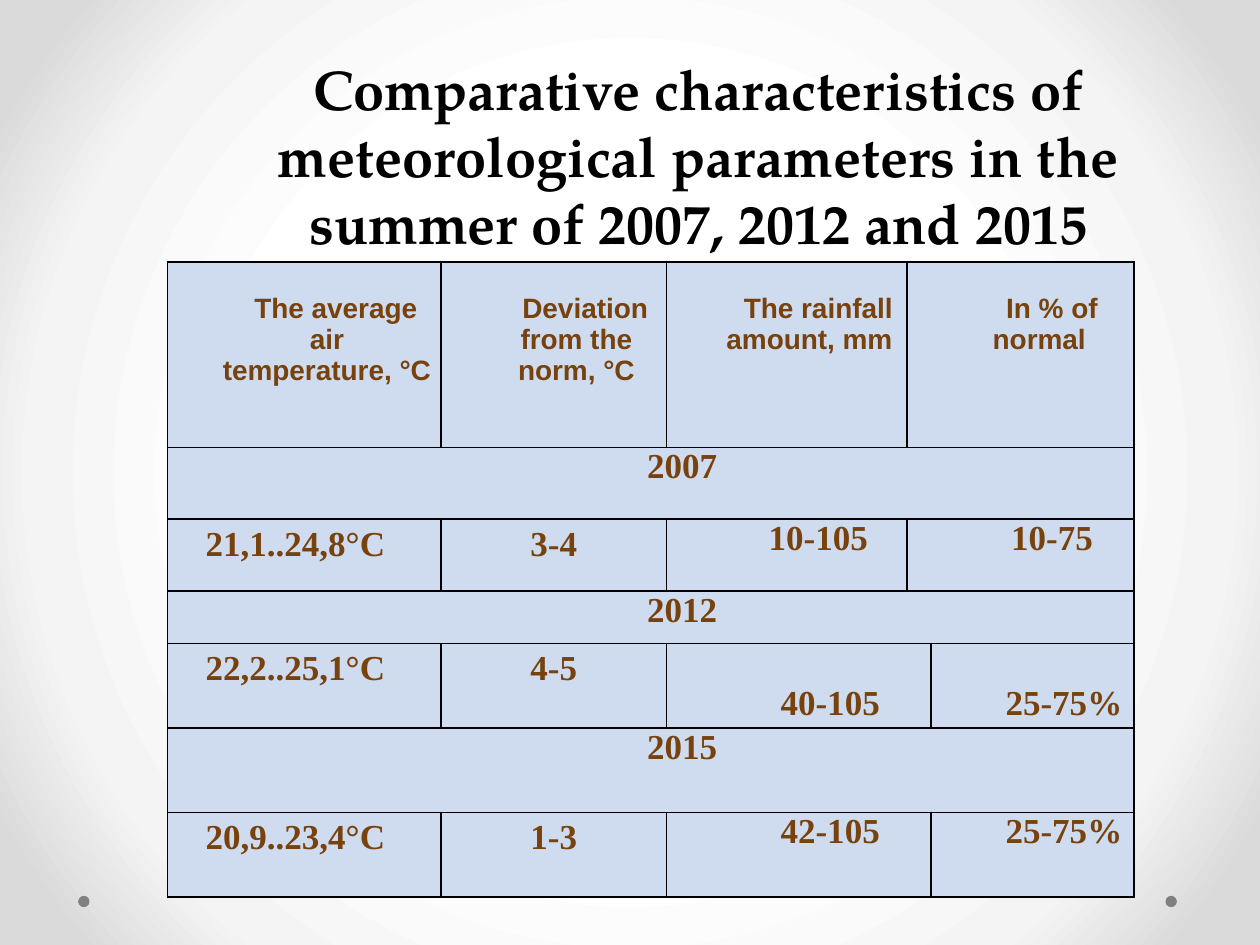
"""Build a slide with a table comparing summer weather in three years."""
from lxml import etree
from pptx import Presentation, util as u
from pptx.dml.color import RGBColor
from pptx.enum import shapes, text
from pptx.oxml import parse_xml
from pptx.oxml.ns import nsdecls, qn

TITLE = "Comparative characteristics of meteorological parameters in the summer of 2007, 2012 and 2015"
HEADERS = ["The average air temperature, °C", "Deviation from the norm, °C",
           "The rainfall amount, mm", "In % of normal "]
YEARS = [
    ("2007", ["21,1..24,8°С", "3-4", "10-105", "10-75"]),
    ("2012", ["22,2..25,1°С", "4-5", "40-105", "25-75%"]),
    ("2015", ["20,9..23,4°С", "1-3", "42-105", "25-75%"]),
]
COLUMN_WIDTHS = [2.17, 1.79, 1.91, 0.19, 1.61]
ROW_HEIGHTS = [1.47, 0.57, 0.57, 0.42, 0.67, 0.67, 0.67]
NARROW_RAINFALL = [(0, 0), (1, 1), (2, 2), (3, 4)]
WIDE_RAINFALL = [(0, 0), (1, 1), (2, 3), (4, 4)]
FULL_WIDTH = [(0, 4)]
COLORS = {"title": "000000", "text": "77420D", "cell": "CFDCF0", "border": "000000", "dot": "808080"}
GRADIENT = [(50, "FFFFFF"), (76, "F4F4F4"), (92, "DADADA")]
TITLE_FONT = {"name": "TeX Gyre Pagella", "size": u.Pt(32), "bold": True}
HEADER_FONT = {"name": "Arial", "size": u.Pt(16), "bold": True}
VALUE_FONT = {"name": "Times New Roman", "size": u.Pt(20), "bold": True}


def apply(target, values):
    for name, value in values.items():
        setattr(target, name, value)


def write(frame, content, font, color):
    paragraph = frame.paragraphs[0]
    paragraph.alignment = text.PP_ALIGN.CENTER
    run = paragraph.add_run()
    run.text = content
    apply(run.font, font)
    run.font.color.rgb = RGBColor.from_string(COLORS[color])
    return paragraph


def set_background(slide):
    stops = "".join(f'<a:gs pos="{position * 1000}"><a:srgbClr val="{color}"/></a:gs>'
                    for position, color in GRADIENT)
    background = parse_xml(
        f'<p:bg {nsdecls("p", "a")}><p:bgPr><a:gradFill rotWithShape="1"><a:gsLst>{stops}</a:gsLst>'
        '<a:path path="circle"><a:fillToRect l="50000" t="50000" r="50000" b="50000"/></a:path>'
        '</a:gradFill><a:effectLst/></p:bgPr></p:bg>')
    slide.element.cSld.insert(0, background)


def add_dot(slide, left):
    dot = slide.shapes.add_shape(shapes.MSO_SHAPE.OVAL, u.Inches(left), u.Inches(7.11),
                                 u.Inches(0.09), u.Inches(0.09))
    dot.shadow.inherit = False
    dot.fill.solid()
    dot.fill.fore_color.rgb = RGBColor.from_string(COLORS["dot"])
    dot.line.fill.background()


def add_title(slide):
    title = slide.shapes.title
    apply(title, {"left": u.Inches(1.26), "top": u.Inches(0.32),
                  "width": u.Inches(8.57), "height": u.Inches(1.76)})
    apply(title.text_frame, {"word_wrap": True, "auto_size": text.MSO_AUTO_SIZE.NONE,
                             "vertical_anchor": text.MSO_ANCHOR.BOTTOM})
    write(title.text_frame, TITLE, TITLE_FONT, "title")


def style_cell(cell):
    apply(cell, {"margin_left": u.Inches(0.07), "margin_right": u.Inches(0.07),
                 "margin_top": 0, "margin_bottom": 0})
    properties = cell._tc.get_or_add_tcPr()
    for side in ("a:lnL", "a:lnR", "a:lnT", "a:lnB"):
        line = etree.SubElement(properties, qn(side), w=str(u.Pt(1)))
        fill = etree.SubElement(line, qn("a:solidFill"))
        etree.SubElement(fill, qn("a:srgbClr"), val=COLORS["border"])
    cell.fill.solid()
    cell.fill.fore_color.rgb = RGBColor.from_string(COLORS["cell"])


def fill_row(table, row, spans, contents, font, top=0, spaced_columns=0):
    for index, ((first, last), content) in enumerate(zip(spans, contents)):
        cell = table.cell(row, first)
        if last > first:
            cell.merge(table.cell(row, last))
        paragraph = write(cell.text_frame, content, font, "text")
        if index < spaced_columns:
            paragraph.line_spacing = 1.15
            if index == 0:
                cell.margin_right = u.Inches(0.21)
        else:
            cell.margin_top = u.Inches(top)
            properties = paragraph._p.get_or_add_pPr()
            properties.set("marL", str(u.Inches(0.36)))
            properties.set("indent", str(u.Inches(0.14)))


def add_weather_table(slide):
    frame = slide.shapes.add_table(len(ROW_HEIGHTS), len(COLUMN_WIDTHS), u.Inches(1.33), u.Inches(2.08),
                                   u.Inches(sum(COLUMN_WIDTHS)), u.Inches(sum(ROW_HEIGHTS)))
    table = frame.table
    apply(table, {"first_row": False, "horz_banding": False})
    for column, width in zip(table.columns, COLUMN_WIDTHS):
        column.width = u.Inches(width)
    for row, height in zip(table.rows, ROW_HEIGHTS):
        row.height = u.Inches(height)
    for cell in table.iter_cells():
        style_cell(cell)
    fill_row(table, 0, NARROW_RAINFALL, HEADERS, HEADER_FONT, top=0.25)
    for index, (year, values) in enumerate(YEARS):
        row = 1 + 2 * index
        spans = NARROW_RAINFALL if year == "2007" else WIDE_RAINFALL
        fill_row(table, row, FULL_WIDTH, [year], VALUE_FONT)
        fill_row(table, row + 1, spans, values, VALUE_FONT,
                 top=0.32 if year == "2012" else 0, spaced_columns=2)


def main():
    presentation = Presentation()
    apply(presentation, {"slide_width": u.Inches(10), "slide_height": u.Inches(7.5)})
    slide = presentation.slides.add_slide(presentation.slide_layouts[5])
    set_background(slide)
    for left in (9.25, 0.62):
        add_dot(slide, left)
    add_title(slide)
    add_weather_table(slide)
    presentation.save("out.pptx")


if __name__ == "__main__":
    main()
